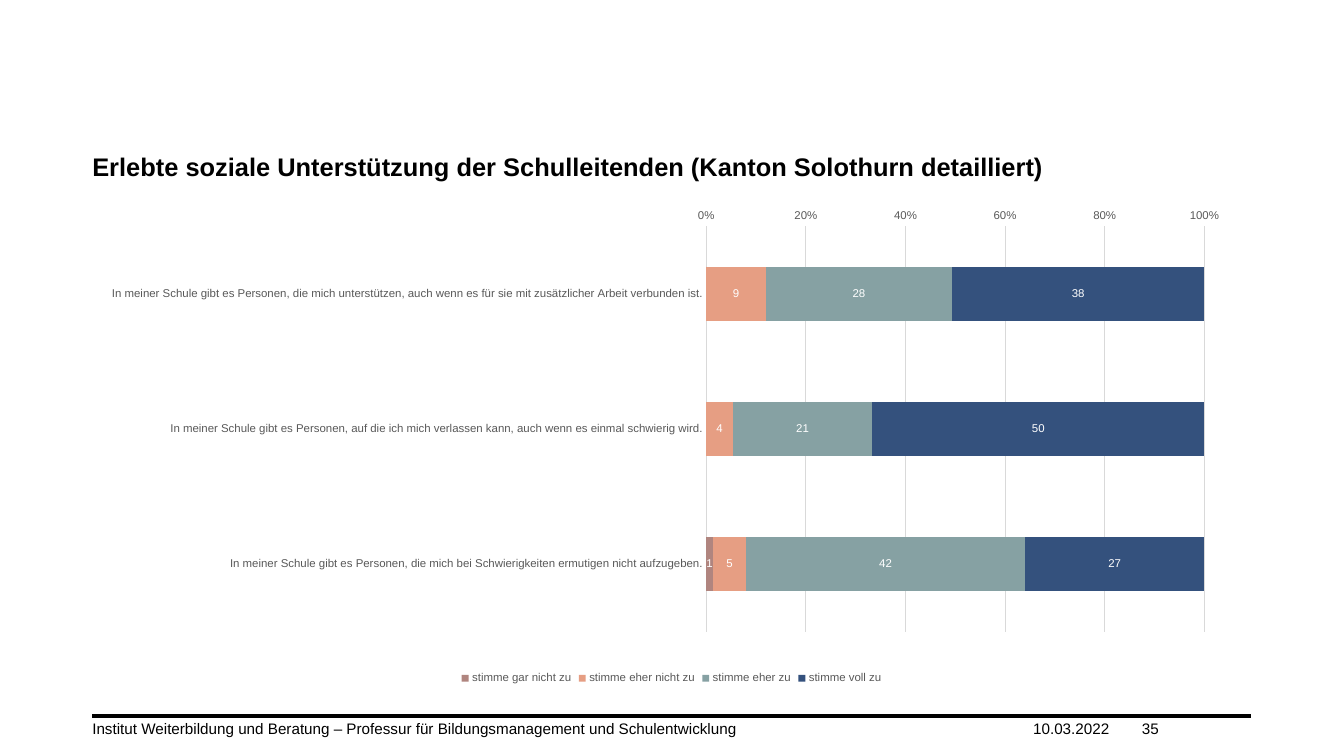
import pptx
import pptx.chart.data
import pptx.dml.color
import pptx.enum.chart
import pptx.enum.text
import pptx.oxml
import pptx.oxml.ns
import pptx.util
from dataclasses import dataclass

Inches = pptx.util.Inches
Pt = pptx.util.Pt
enum = pptx.enum.chart


@dataclass
class Theme:
    font: str = "Arial"
    ink: str = "000000"
    gray: str = "595959"
    grid: str = "D9D9D9"
    white: str = "FFFFFF"
    title: int = 20
    foot: int = 12
    small: int = 9


theme = Theme()


def style(font, size, color, bold=False):
    form = {"name": theme.font, "size": Pt(size), "bold": bold}
    for key, value in form.items():
        setattr(font, key, value)
    font.color.rgb = pptx.dml.color.RGBColor.from_string(color)


def stroke(line, color, width):
    line.color.rgb = pptx.dml.color.RGBColor.from_string(color)
    line.width = Pt(width)


deck = pptx.Presentation()
deck.slide_width = Inches(14.7)
deck.slide_height = Inches(8.27)
slide = deck.slides.add_slide(deck.slide_layouts[6])
left, right = 1.01, 13.68
width = right - left

rule = slide.shapes.add_connector(
    pptx.enum.shapes.MSO_CONNECTOR.STRAIGHT,
    Inches(left), Inches(7.83), Inches(right), Inches(7.83))
stroke(rule.line, theme.ink, 3)
pptx.oxml.ns.qn("a:effectLst")
rule.element.spPr.append(pptx.oxml.parse_xml(
    f'<a:effectLst {pptx.oxml.ns.nsdecls("a")}/>'))

anchor = pptx.enum.text.MSO_ANCHOR
texts = [
    ("Erlebte soziale Unterstützung der Schulleitenden (Kanton Solothurn detailliert)",
     left, 1.65, width, 0.4, theme.title, True, anchor.TOP),
    ("Institut Weiterbildung und Beratung – Professur für Bildungsmanagement und Schulentwicklung",
     left, 7.87, 10.29, 0.2, theme.foot, False, anchor.BOTTOM),
    ("10.03.2022", 11.3, 7.87, 1.19, 0.2, theme.foot, False, anchor.BOTTOM),
    ("35", 12.49, 7.87, 1.19, 0.2, theme.foot, False, anchor.BOTTOM),
]
for text, x, y, w, h, size, bold, place in texts:
    frame = slide.shapes.add_textbox(Inches(x), Inches(y), Inches(w), Inches(h)).text_frame
    form = {"word_wrap": True, "vertical_anchor": place, "margin_left": 0,
            "margin_right": 0, "margin_top": 0, "margin_bottom": 0}
    for key, value in form.items():
        setattr(frame, key, value)
    run = frame.paragraphs[0].add_run()
    run.text = text
    style(run.font, size, theme.ink, bold)

data = pptx.chart.data.CategoryChartData(number_format="###0")
data.categories = [
    "In meiner Schule gibt es Personen, die mich unterstützen, auch wenn es für sie mit zusätzlicher Arbeit verbunden ist.",
    "In meiner Schule gibt es Personen, auf die ich mich verlassen kann, auch wenn es einmal schwierig wird.",
    "In meiner Schule gibt es Personen, die mich bei Schwierigkeiten ermutigen nicht aufzugeben.",
]
levels = [
    ("stimme gar nicht zu", (0, 0, 1), "B0857F"),
    ("stimme eher nicht zu", (9, 4, 5), "E69E83"),
    ("stimme eher zu", (28, 21, 42), "86A1A3"),
    ("stimme voll zu", (38, 50, 27), "34517D"),
]
for name, values, color in levels:
    data.add_series(name, values)

chart = slide.shapes.add_chart(
    enum.XL_CHART_TYPE.BAR_STACKED_100, Inches(left), Inches(2.29),
    Inches(width), Inches(5.24), data).chart
style(chart.font, 10, theme.ink)
chart.has_title = False
chart.has_legend = True
chart.legend.position = enum.XL_LEGEND_POSITION.BOTTOM
chart.legend.include_in_layout = False
style(chart.legend.font, theme.small, theme.gray)

plot = chart.plots[0]
form = {"gap_width": 150, "overlap": 100, "vary_by_categories": False}
for key, value in form.items():
    setattr(plot, key, value)

for series, (name, values, color) in zip(plot.series, levels):
    series.format.fill.solid()
    series.format.fill.fore_color.rgb = pptx.dml.color.RGBColor.from_string(color)
    labels = series.data_labels
    form = {"show_value": True, "position": enum.XL_LABEL_POSITION.CENTER,
            "number_format": "###0;;", "number_format_is_linked": False}
    for key, value in form.items():
        setattr(labels, key, value)
    style(labels.font, theme.small, theme.white)

cats, scale = chart.category_axis, chart.value_axis
for axis in (cats, scale):
    axis.major_tick_mark = enum.XL_TICK_MARK.NONE
    axis.minor_tick_mark = enum.XL_TICK_MARK.NONE
    style(axis.tick_labels.font, theme.small, theme.gray)
cats.reverse_order = True
cats.crosses = enum.XL_AXIS_CROSSES.MAXIMUM
stroke(cats.format.line, theme.grid, 0.75)

form = {"minimum_scale": 0, "maximum_scale": 1, "major_unit": 0.2,
        "has_major_gridlines": True}
for key, value in form.items():
    setattr(scale, key, value)
scale.format.line.fill.background()
stroke(scale.major_gridlines.format.line, theme.grid, 0.75)
scale.tick_labels.number_format = "0%"
scale.tick_labels.number_format_is_linked = False

area = chart.element.xpath(".//c:plotArea")[0]
for old in area.xpath("./c:layout"):
    area.remove(old)
area.insert(0, pptx.oxml.parse_xml(
    f'<c:layout {pptx.oxml.ns.nsdecls("c")}><c:manualLayout>'
    '<c:layoutTarget val="inner"/><c:xMode val="edge"/><c:yMode val="edge"/>'
    '<c:x val="0.53"/><c:y val="0.02"/><c:w val="0.43"/><c:h val="0.86"/>'
    '</c:manualLayout></c:layout>'))

deck.save("out.pptx")
